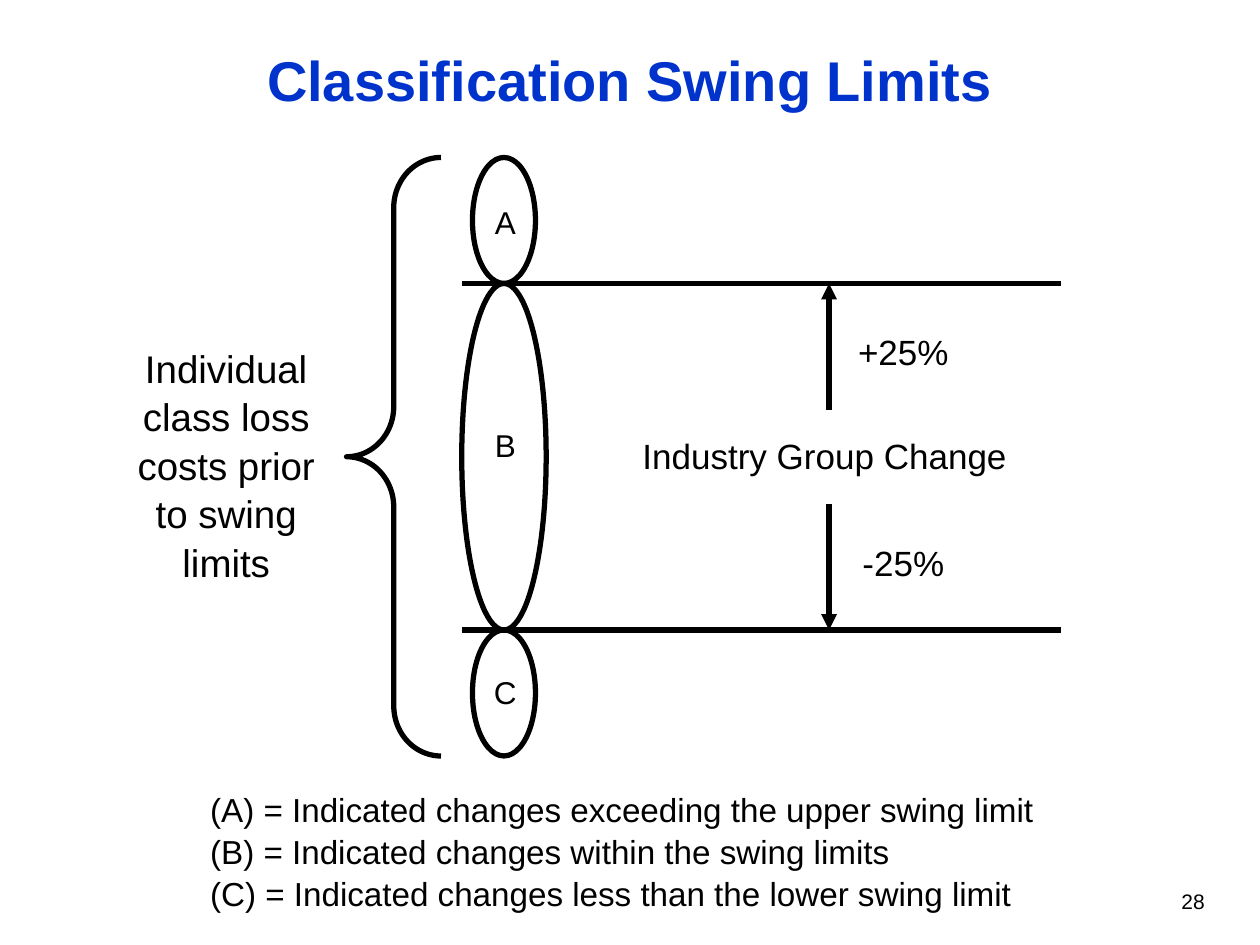
from lxml import etree
from pptx import Presentation
from pptx.dml.color import RGBColor
from pptx.enum.shapes import MSO_CONNECTOR, MSO_SHAPE
from pptx.enum.text import MSO_ANCHOR, PP_ALIGN
from pptx.oxml.ns import qn
from pptx.util import Inches, Pt

LEFT, CENTER, RIGHT = PP_ALIGN.LEFT, PP_ALIGN.CENTER, PP_ALIGN.RIGHT
TOP, MIDDLE = MSO_ANCHOR.TOP, MSO_ANCHOR.MIDDLE
ELLIPSE, LEFT_BRACE = MSO_SHAPE.OVAL, MSO_SHAPE.LEFT_BRACE
STRAIGHT = MSO_CONNECTOR.STRAIGHT
TITLE_ONLY = 5
COLORS = {"title": "0033CC", "ink": "000000", "background": "FFFFFF"}


def write_text(frame, text, size=20, color="ink", bold=False, align=CENTER,
               anchor=TOP, line_spacing=None, hanging=0):
    frame.word_wrap = True
    frame.vertical_anchor = anchor
    frame.text = text
    for paragraph in frame.paragraphs:
        paragraph.alignment = align
        if line_spacing:
            paragraph.line_spacing = line_spacing
        if hanging:
            properties = paragraph._p.get_or_add_pPr()
            properties.set("marL", str(Inches(hanging)))
            properties.set("indent", str(-Inches(hanging)))
        paragraph.font.name = "Arial"
        paragraph.font.size = Pt(size)
        paragraph.font.bold = bold
        paragraph.font.color.rgb = RGBColor.from_string(COLORS[color])


class SlideBuilder:
    def __init__(self, slide):
        self.slide = slide
        self.shapes = slide.shapes
        self.line_width = Pt(3)
        fill = slide.background.fill
        fill.solid()
        fill.fore_color.rgb = RGBColor.from_string(COLORS["background"])

    def start_group(self):
        self.shapes = self.slide.shapes.add_group_shape().shapes

    def title(self, text, left, top, width, height):
        title = self.slide.shapes.title
        title.left, title.top = Inches(left), Inches(top)
        title.width, title.height = Inches(width), Inches(height)
        write_text(title.text_frame, text, size=32, color="title", bold=True,
                   anchor=MIDDLE)

    def text(self, text, left, top, width, height, **style):
        box = self.shapes.add_textbox(Inches(left), Inches(top),
                                      Inches(width), Inches(height))
        write_text(box.text_frame, text, **style)

    def style_line(self, line):
        line.color.rgb = RGBColor.from_string(COLORS["ink"])
        line.width = self.line_width

    def outline(self, kind, left, top, width, height):
        shape = self.shapes.add_shape(kind, Inches(left), Inches(top),
                                      Inches(width), Inches(height))
        shape.shadow.inherit = False
        shape.fill.background()
        self.style_line(shape.line)
        return shape

    def line(self, x1, y1, x2, y2, arrow=False):
        connector = self.shapes.add_connector(
            STRAIGHT, Inches(x1), Inches(y1), Inches(x2), Inches(y2))
        self.style_line(connector.line)
        if arrow:
            etree.SubElement(connector.line._get_or_add_ln(), qn("a:tailEnd"),
                             type="triangle")
        etree.SubElement(connector._element.spPr, qn("a:effectLst"))


def main():
    presentation = Presentation()
    presentation.slide_width, presentation.slide_height = Inches(10), Inches(7.5)
    slide = presentation.slides.add_slide(presentation.slide_layouts[TITLE_ONLY])
    builder = SlideBuilder(slide)
    upper, lower = 2.25, 5
    axis = 4

    builder.title("Classification Swing Limits", 0.75, 0.25, 8.5, 0.75)
    builder.text("28", 7.58, 7, 2.08, 0.5, size=12, align=RIGHT)
    builder.text("Individual class loss costs prior to swing limits",
                 0.92, 2.67, 1.75, 1.93, size=22, line_spacing=1.05)
    legend = [
        "(A) = Indicated changes exceeding the upper swing limit",
        "(B) = Indicated changes within the swing limits",
        "(C) = Indicated changes less than the lower swing limit",
    ]
    builder.text("\n".join(legend), 1.57, 6.2, 7.1, 1.05, size=19,
                 align=LEFT, line_spacing=1.05, hanging=0.5)

    builder.start_group()
    brace = builder.outline(LEFT_BRACE, 2.75, upper - 1, 0.75, lower - upper + 2)
    brace.adjustments[0] = 0.53
    brace.adjustments[1] = 0.5

    for limit, arrow_start in ((upper, 3.25), (lower, 4)):
        builder.line(3.67, limit, 8.42, limit)
        builder.line(6.58, arrow_start, 6.58, limit, arrow=True)

    zones = [
        ("A", upper - 1, upper, 0.5, 1.56),
        ("B", upper, lower, 0.67, 3.33),
        ("C", lower, lower + 1, 0.5, 5.29),
    ]
    for letter, top, bottom, width, label_top in zones:
        builder.outline(ELLIPSE, axis - width / 2, top, width, bottom - top)
        builder.text(letter, axis - 0.2, label_top, 0.42, 0.4, size=18)

    builder.text("Industry Group Change", 4.92, 3.4, 3.25, 0.43)
    for change, top in (("+25%", 2.57), ("-25%", 4.25)):
        builder.text(change, 6.67, top, 1, 0.43)

    presentation.save("out.pptx")


if __name__ == "__main__":
    main()
